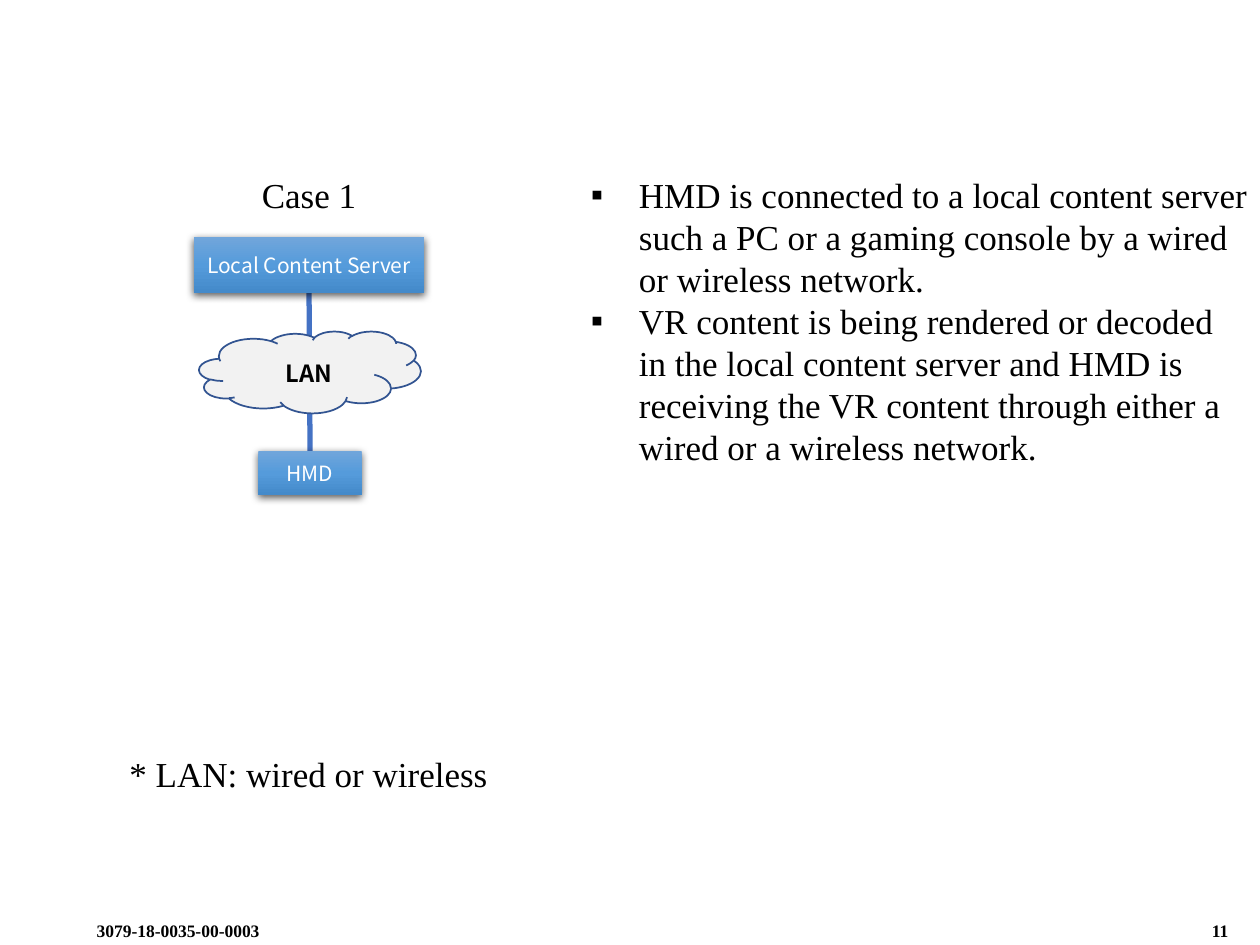
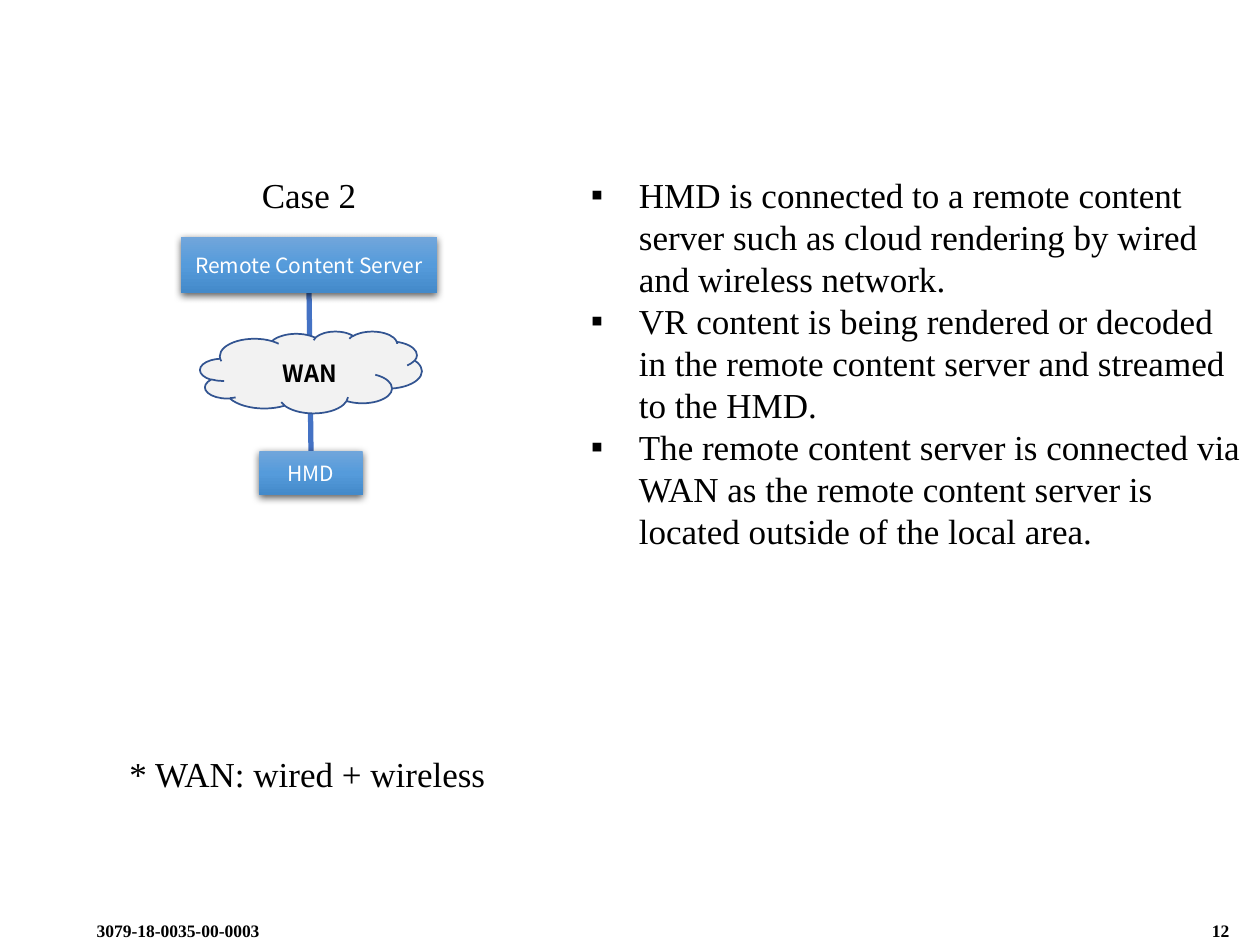
from copy import deepcopy
from dataclasses import dataclass

from lxml import etree
from pptx import Presentation
from pptx.dml.color import RGBColor
from pptx.enum.shapes import MSO_CONNECTOR, MSO_SHAPE
from pptx.enum.text import MSO_ANCHOR, MSO_AUTO_SIZE, PP_ALIGN
from pptx.oxml.ns import qn
from pptx.util import Cm, Pt

RECTANGLE, CLOUD = MSO_SHAPE.RECTANGLE, MSO_SHAPE.CLOUD
STRAIGHT = MSO_CONNECTOR.STRAIGHT
TOP, MIDDLE = MSO_ANCHOR.TOP, MSO_ANCHOR.MIDDLE
LEFT, CENTER = PP_ALIGN.LEFT, PP_ALIGN.CENTER
NO_AUTOFIT = MSO_AUTO_SIZE.NONE
TITLE_ONLY = 5
TOP_SITE, BOTTOM_SITE = 0, 2

SERIF, SANS = "Times New Roman", "Noto Sans CJK KR"
BLACK, WHITE = "000000", "FFFFFF"
LINK_BLUE, CLOUD_FILL, CLOUD_LINE = "4472C4", "F2F2F2", "325491"
BOX_GRADIENT = ("71A6DB", "559BDB", "448ACA")

BODY = {"name": SERIF, "size": Pt(20), "bold": False}
FOOTER = {"name": SERIF, "size": Pt(10), "bold": True}
BOX = {"name": SANS, "size": Pt(12), "bold": False}
NETWORK = {"name": SANS, "size": Pt(13.5), "bold": True}
BODY_LINE = Pt(24)
BULLET_INDENT = Cm(0.97)

DOCUMENT_NUMBER = "3079-18-0035-00-0003"
SERVER_AXIS = 6.23


@dataclass(frozen=True)
class Area:
    """A rectangle in centimetres."""
    left: float
    top: float
    width: float
    height: float

    def lengths(self) -> tuple:
        return Cm(self.left), Cm(self.top), Cm(self.width), Cm(self.height)


@dataclass(frozen=True)
class Case:
    title: str
    server: str
    server_width: float
    network: str
    network_axis: float
    points: tuple[str, ...]
    note: str
    page: str


CASES = (
    Case("Case 1", "Local Content Server", 4.65, "LAN", 6.25, (
        "HMD is connected to a local content server such a PC or a gaming console "
        "by a wired or wireless network.",
        "VR content is being rendered or decoded in the local content server and HMD "
        "is receiving the VR content through either a wired or a wireless network.",
    ), "* LAN: wired or wireless", "11"),
    Case("Case 2", "Remote Content Server", 5.16, "WAN", 6.27, (
        "HMD is connected to a remote content server such as cloud rendering "
        "by wired and wireless network.",
        "VR content is being rendered or decoded in the remote content server "
        "and streamed to the HMD.",
        "The remote content server is connected via WAN as the remote content server "
        "is located outside of the local area.",
    ), "* WAN: wired + wireless", "12"),
)


def color(value: str) -> RGBColor:
    return RGBColor.from_string(value)


def centered(axis: float, top: float, width: float, height: float) -> Area:
    return Area(axis - width / 2, top, width, height)


def write(shape, texts, font: dict, ink=BLACK, align=LEFT, anchor=TOP,
          line_spacing=None, wrap=True, bullet="") -> None:
    """Fill a shape's text frame with one paragraph per text."""
    frame = shape.text_frame
    frame.text = "\n".join(texts)
    frame.auto_size = NO_AUTOFIT
    frame.word_wrap = wrap
    frame.vertical_anchor = anchor
    for paragraph in frame.paragraphs:
        if bullet:
            add_bullet(paragraph, bullet)
        paragraph.alignment = align
        paragraph.line_spacing = line_spacing
        for name, value in font.items():
            setattr(paragraph.font, name, value)
        paragraph.font.color.rgb = color(ink)


def add_bullet(paragraph, character: str) -> None:
    properties = paragraph._p.get_or_add_pPr()
    properties.set("marL", str(BULLET_INDENT))
    properties.set("indent", str(-BULLET_INDENT))
    etree.SubElement(properties, qn("a:buFont"), typeface=SERIF)
    etree.SubElement(properties, qn("a:buChar"), char=character)


def add_text(shapes, area: Area, texts, font: dict, **options):
    box = shapes.add_textbox(*area.lengths())
    write(box, texts, font, **options)
    return box


def fill_gradient(shape) -> None:
    """Fill from top to bottom with the three box colours."""
    shape.fill.gradient()
    shape.fill.gradient_angle = 270
    stops = shape._element.spPr.find(f".//{qn('a:gsLst')}")
    stops.insert(1, deepcopy(stops[0]))
    for index, (stop, value) in enumerate(zip(shape.fill.gradient_stops, BOX_GRADIENT)):
        stop.position = index / 2
        stop.color.rgb = color(value)


def add_shadow(shape) -> None:
    shape.shadow.inherit = False
    effects = shape._element.spPr.find(qn("a:effectLst"))
    shadow = etree.SubElement(effects, qn("a:outerShdw"), blurRad=str(Pt(4.5)),
                              dist=str(Pt(1.5)), dir="5400000", rotWithShape="0")
    black = etree.SubElement(shadow, qn("a:srgbClr"), val=BLACK)
    etree.SubElement(black, qn("a:alpha"), val="63000")


def add_box(slide, area: Area, label: str):
    box = slide.shapes.add_shape(RECTANGLE, *area.lengths())
    fill_gradient(box)
    box.line.fill.background()
    add_shadow(box)
    write(box, [label], BOX, ink=WHITE, align=CENTER, anchor=MIDDLE, wrap=False)
    return box


def add_network(slide, axis: float, label: str) -> None:
    """Group a cloud with its label."""
    shapes = slide.shapes.add_group_shape().shapes
    cloud = shapes.add_shape(CLOUD, *centered(axis, 6.68, 4.47, 1.65).lengths())
    cloud.shadow.inherit = False
    cloud.fill.solid()
    cloud.fill.fore_color.rgb = color(CLOUD_FILL)
    cloud.line.color.rgb = color(CLOUD_LINE)
    cloud.line.width = Pt(1)
    name = add_text(shapes, centered(axis - 0.02, 7.24, 2.24, 0.69), [label], NETWORK,
                    align=CENTER)
    name.text_frame.margin_top = name.text_frame.margin_bottom = 0


def add_link(slide):
    link = slide.shapes.add_connector(STRAIGHT, 0, 0, 0, 0)
    link.line.color.rgb = color(LINK_BLUE)
    link.line.width = Pt(3)
    etree.SubElement(link._element.spPr, qn("a:effectLst"))
    return link


def add_diagram(slide, case: Case) -> None:
    link = add_link(slide)
    headset = add_box(slide, centered(case.network_axis, 9.09, 2.08, 0.89), "HMD")
    add_network(slide, case.network_axis, case.network)
    server = add_box(slide, centered(SERVER_AXIS, 4.78, case.server_width, 1.12),
                     case.server)
    link.begin_connect(server, BOTTOM_SITE)
    link.end_connect(headset, TOP_SITE)


def set_title(slide, text: str) -> None:
    title = slide.shapes.title
    title.left, title.top, title.width, title.height = centered(
        SERVER_AXIS, 3.38, 3, 1.12).lengths()
    write(title, [text], BODY, align=CENTER, line_spacing=BODY_LINE)


def add_footer(slide, page: str) -> None:
    add_text(slide.shapes, Area(1.7, 18.42, 13.34, 0.64), [DOCUMENT_NUMBER], FOOTER)
    add_text(slide.shapes, Area(24.18, 18.42, 1.22, 0.64), [page], FOOTER)


def add_case_slide(presentation, case: Case) -> None:
    slide = presentation.slides.add_slide(presentation.slide_layouts[TITLE_ONLY])
    set_title(slide, case.title)
    add_footer(slide, case.page)
    add_diagram(slide, case)
    add_text(slide.shapes, Area(11.66, 3.38, 13.74, 7.95), case.points, BODY,
             line_spacing=BODY_LINE, bullet="▪")
    add_text(slide.shapes, Area(2.36, 15.04, 8, 1.12), [case.note], BODY,
             line_spacing=BODY_LINE)


def main() -> None:
    presentation = Presentation()
    presentation.slide_width, presentation.slide_height = Cm(25.4), Cm(19.05)
    for case in CASES:
        add_case_slide(presentation, case)
    presentation.save("out.pptx")


if __name__ == "__main__":
    main()
